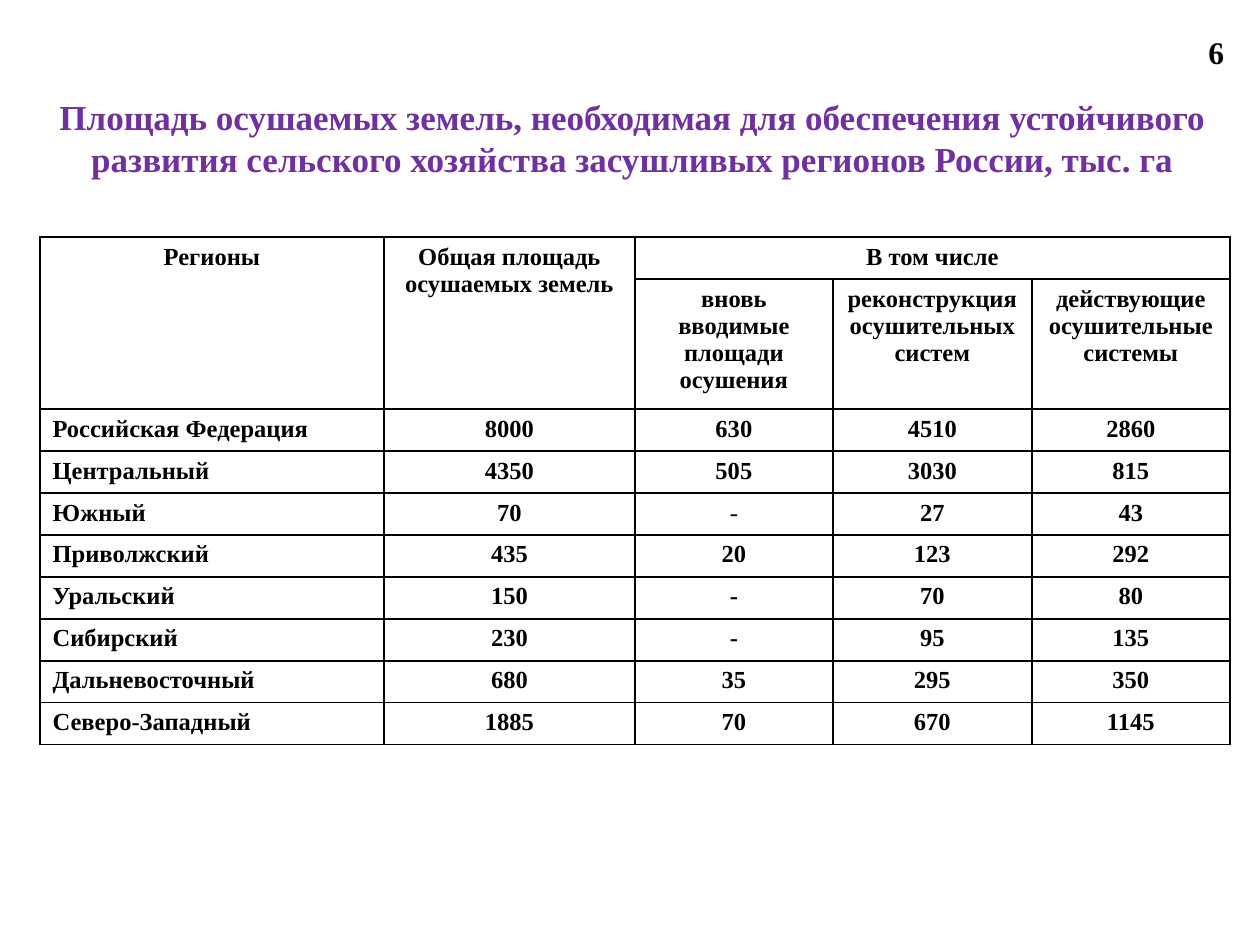
from lxml.etree import SubElement
from pptx import Presentation
from pptx.dml.color import RGBColor
from pptx.enum.text import MSO_ANCHOR as ANCHOR, MSO_AUTO_SIZE as AUTOSIZE, PP_ALIGN as ALIGN
from pptx.oxml.ns import qn
from pptx.util import Pt

EMU_PER_PX = 914400 / 126
COLORS = {"title": "7030A0", "text": "000000", "border": "000000"}

COLUMN_WIDTHS = [344, 251, 198, 199, 198]
ROW_HEIGHT, SUBHEADER_HEIGHT = 42, 130
HEADERS = [
    ["Регионы", "Общая площадь осушаемых земель", "В том числе", "", ""],
    ["", "", "вновь вводимые площади осушения",
     "реконструкция осушительных систем", "действующие осушительные системы"],
]
REGIONS = [
    ["Российская Федерация", "8000", "630", "4510", "2860"],
    ["Центральный", "4350", "505", "3030", "815"],
    ["Южный", "70", "-", "27", "43"],
    ["Приволжский", "435", "20", "123", "292"],
    ["Уральский", "150", "-", "70", "80"],
    ["Сибирский", "230", "-", "95", "135"],
    ["Дальневосточный", "680", "35", "295", "350"],
    ["Северо-Западный", "1885", "70", "670", "1145"],
]
MERGES = [((0, 0), (1, 0)), ((0, 1), (1, 1)), ((0, 2), (0, 4))]


def px(n):
    return round(n * EMU_PER_PX)


class SlideBuilder:
    font_name = "Times New Roman"

    def __init__(self, slide):
        self.slide = slide

    def style(self, p, size, color, align=ALIGN.LEFT, bold=True):
        p.alignment = align
        p.font.name = self.font_name
        p.font.size = Pt(size)
        p.font.bold = bold
        p.font.color.rgb = RGBColor.from_string(COLORS[color])

    def title(self, text, x, y, w, h):
        sp = self.slide.shapes.title
        sp.left, sp.top, sp.width, sp.height = map(px, (x, y, w, h))
        tf = sp.text_frame
        tf.text = text
        tf.auto_size = AUTOSIZE.NONE
        tf.vertical_anchor = ANCHOR.MIDDLE
        self.style(tf.paragraphs[0], 20, "title", ALIGN.CENTER)

    def label(self, text, x, y, w, h):
        sp = self.slide.shapes.add_textbox(*map(px, (x, y, w, h)))
        tf = sp.text_frame
        tf.text = text
        tf.word_wrap = False
        tf.auto_size = AUTOSIZE.SHAPE_TO_FIT_TEXT
        self.style(tf.paragraphs[0], 18, "text")

    def borders(self, cell):
        tc_pr = cell._tc.get_or_add_tcPr()
        for side in ("lnL", "lnR", "lnT", "lnB"):
            line = SubElement(tc_pr, qn(f"a:{side}"), w=str(Pt(1)))
            fill = SubElement(line, qn("a:solidFill"))
            SubElement(fill, qn("a:srgbClr"), val=COLORS["border"])

    def table(self, rows, x, y, widths, heights, merges):
        frame = self.slide.shapes.add_table(
            len(rows), len(widths), px(x), px(y), px(sum(widths)), px(sum(heights)))
        table = frame.table
        table.first_row = table.horz_banding = False
        for column, width in zip(table.columns, widths):
            column.width = px(width)
        for row, height in zip(table.rows, heights):
            row.height = px(height)
        for start, end in merges:
            table.cell(*start).merge(table.cell(*end))
        for r, values in enumerate(rows):
            for c, value in enumerate(values):
                cell = table.cell(r, c)
                self.borders(cell)
                cell.fill.background()
                if cell.is_spanned:
                    continue
                cell.text = value
                is_region = c == 0 and r >= len(HEADERS)
                self.style(cell.text_frame.paragraphs[0], 14, "text",
                           ALIGN.LEFT if is_region else ALIGN.CENTER,
                           bold=(values[0], value) != ("Южный", "-"))


def main():
    prs = Presentation()
    prs.slide_width, prs.slide_height = px(1260), px(945)
    builder = SlideBuilder(prs.slides.add_slide(prs.slide_layouts[5]))

    # Heading
    builder.title("Площадь осушаемых земель, необходимая для обеспечения устойчивого "
                  "развития сельского хозяйства засушливых регионов России, тыс. га",
                  15, 59, 1235, 158)

    # Drained land by region
    heights = [ROW_HEIGHT, SUBHEADER_HEIGHT] + [ROW_HEIGHT] * len(REGIONS)
    builder.table(HEADERS + REGIONS, 40, 237, COLUMN_WIDTHS, heights, MERGES)

    # Page number
    builder.label("6", 1196, 27, 41, 50)

    prs.save("out.pptx")


if __name__ == "__main__":
    main()
